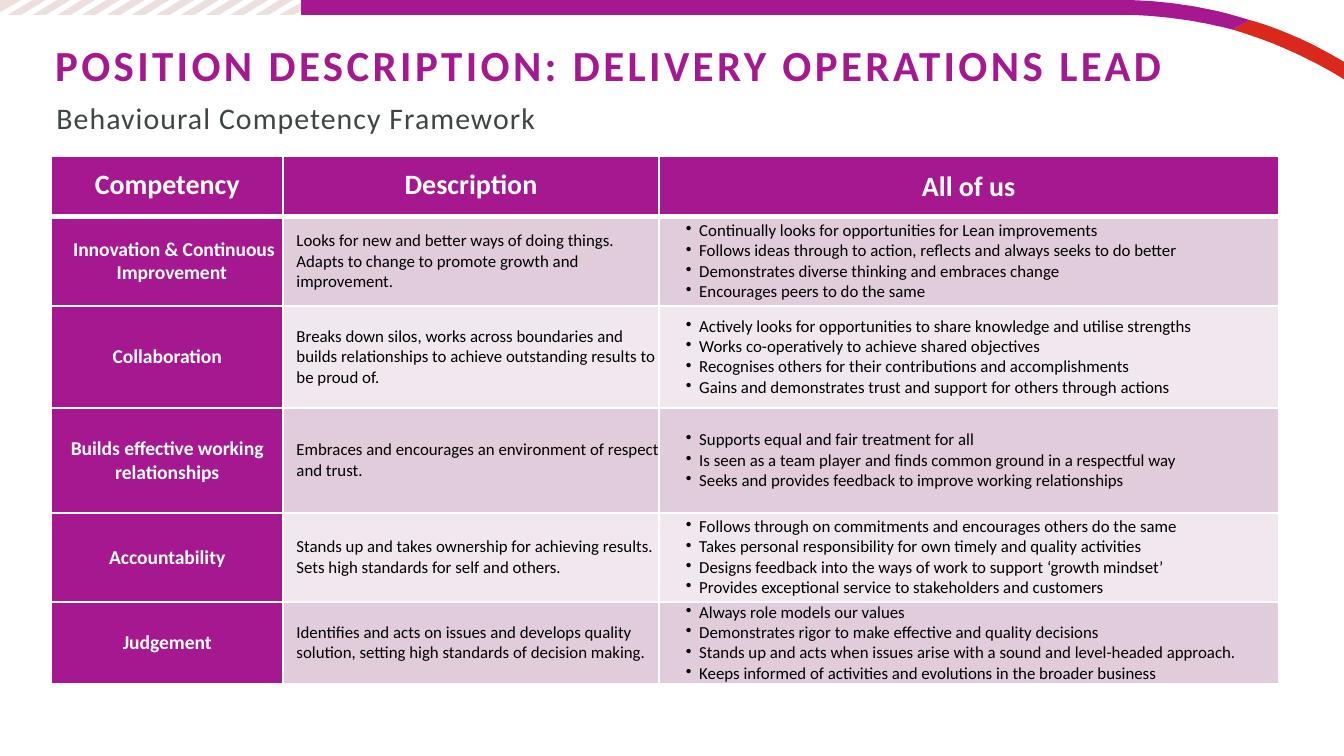
import pptx
import pptx.util
import pptx.dml.color
import pptx.enum.text
import pptx.oxml
import pptx.oxml.ns

HUES = {"plum": "A51890", "red": "DA291C", "blush": "EDDFDE", "slate": "3F4543",
        "white": "FFFFFF", "black": "000000", "dark": "E1CCDB", "light": "F0E8EE"}
RGB = {name: pptx.dml.color.RGBColor.from_string(code) for name, code in HUES.items()}
ALIGN = pptx.enum.text.PP_ALIGN
MID = pptx.enum.text.MSO_ANCHOR.MIDDLE
TOP = pptx.enum.text.MSO_ANCHOR.TOP

deck = pptx.Presentation()
deck.slide_width = pptx.util.Inches(10)
deck.slide_height = deck.slide_width * 9 // 16
UNIT = deck.slide_width / 100
slide = deck.slides.add_slide(deck.slide_layouts[1])


def bend(a, b, c, d, steps=24):
    parts = [i / steps for i in range(steps + 1)]
    return [tuple((1 - t) ** 3 * p + 3 * (1 - t) ** 2 * t * q + 3 * (1 - t) * t * t * r + t ** 3 * s
                  for p, q, r, s in zip(a, b, c, d)) for t in parts]


def write(frame, lines, size, hue, bold=False, align=ALIGN.LEFT, left=0, hang=0, mark=None, space=0):
    frame.word_wrap = True
    for i, line in enumerate(lines):
        para = frame.paragraphs[0] if i == 0 else frame.add_paragraph()
        para.alignment = align
        para.space_before = pptx.util.Pt(0)
        props = para._p.get_or_add_pPr()
        props.set("marL", str(int(left * UNIT)))
        props.set("indent", str(int(-hang * UNIT)))
        ns = pptx.oxml.ns.nsdecls("a")
        bullet = f'<a:buChar {ns} char="{mark}"/>' if mark else f"<a:buNone {ns}/>"
        props.append(pptx.oxml.parse_xml(bullet))
        run = para.add_run()
        run.text = line
        look = {"name": "Calibri", "size": pptx.util.Pt(size), "bold": bold}
        for key, value in look.items():
            setattr(run.font, key, value)
        run.font.color.rgb = RGB[hue]
        if space:
            run._r.get_or_add_rPr().set("spc", str(int(space * 100)))


red = (bend((91.7, 2.2), (94.7, 3.1), (97.4, 4.3), (100, 5.9))
       + bend((100, 4.6), (97.8, 3.3), (95.5, 2.2), (93, 1.5)))
plum = ([(22.4, 0)] + bend((83.2, 0), (86.6, 0), (89.9, 0.5), (93, 1.5))
        + bend((91.7, 2.2), (89, 1.5), (86.1, 1.1), (83.2, 1.1)) + [(22.4, 1.1)])
forms = [("red", red), ("plum", plum)]
for n in range(11):
    x = 0.6 + 1.84 * n
    forms.append(("blush", [(x + 1.8, 0), (x, 1.1), (x + 1, 1.1), (x + 2.8, 0)]))
forms += [("blush", [(22.4, 0.8), (22.4, 0.2), (20.8, 1.1), (21.9, 1.1)]),
          ("blush", [(0.5, 0), (0, 0.3), (0, 0.9), (1.6, 0)]),
          ("blush", [(0, 0), (0, 0.3), (0.5, 0)])]
for hue, points in forms:
    dots = [(x * 100, y * 100) for x, y in points]
    pen = slide.shapes.build_freeform(*dots[0], scale=UNIT / 100)
    pen.add_line_segments(dots[1:], close=True)
    form = pen.convert_to_shape()
    form.shadow.inherit = False
    form.fill.solid()
    form.fill.fore_color.rgb = RGB[hue]
    form.line.fill.background()

heads = [
    (slide.shapes.title, (3.8, 2.6, 88.2, 4.5), 0.3,
     "POSITION DESCRIPTION: DELIVERY OPERATIONS LEAD",
     {"size": 23, "hue": "plum", "bold": True, "space": 1.8}),
    (slide.placeholders[1], (3.8, 7, 82.4, 3), 0.4,
     "Behavioural Competency Framework",
     {"size": 16, "hue": "slate", "space": 0.6}),
]
for shape, box, inset, text, look in heads:
    for key, value in zip(("left", "top", "width", "height"), box):
        setattr(shape, key, int(value * UNIT))
    frame = shape.text_frame
    for side in ("left", "top", "right", "bottom"):
        setattr(frame, "margin_" + side, int(inset * UNIT))
    frame.auto_size = pptx.enum.text.MSO_AUTO_SIZE.NONE
    frame.vertical_anchor = TOP
    write(frame, [text], **look)

rows = [
    (["Competency"], ["Description"], ["All of us"]),
    (["Innovation & Continuous Improvement "],
     ["Looks for new and better ways of doing things. Adapts to change to promote growth and improvement."],
     ["Continually looks for opportunities for Lean improvements",
      "Follows ideas through to action, reflects and always seeks to do better",
      "Demonstrates diverse thinking and embraces change",
      "Encourages peers to do the same"]),
    (["Collaboration"],
     ["Breaks down silos, works across boundaries and builds relationships to achieve "
      "outstanding results to be proud of."],
     ["Actively looks for opportunities to share knowledge and utilise strengths",
      "Works co-operatively to achieve shared objectives",
      "Recognises others for their contributions and accomplishments",
      "Gains and demonstrates trust and support for others through actions"]),
    (["Builds effective working relationships"],
     ["Embraces and encourages an environment of respect and trust."],
     ["Supports equal and fair treatment for all",
      "Is seen as a team player and finds common ground in a respectful way",
      "Seeks and provides feedback to improve working relationships"]),
    (["Accountability"],
     ["Stands up and takes ownership for achieving results. Sets high standards for self and others."],
     ["Follows through on commitments and encourages others do the same",
      "Takes personal responsibility for own timely and quality activities",
      "Designs feedback into the ways of work to support ‘growth mindset’",
      "Provides exceptional service to stakeholders and customers"]),
    (["Judgement"],
     ["Identifies and acts on issues and develops quality solution, setting high standards of decision making."],
     ["Always role models our values",
      "Demonstrates rigor to make effective and quality decisions",
      "Stands up and acts when issues arise with a sound and level-headed approach.",
      "Keeps informed of activities and evolutions in the broader business"]),
]
wides = [17.23, 27.97, 46.1]
talls = [4.5, 6.63, 7.6, 7.8, 6.63, 6.1]
looks = [
    {"size": 10.5, "hue": "white", "bold": True, "align": ALIGN.CENTER},
    {"size": 9, "hue": "black", "left": 1},
    {"size": 9, "hue": "black", "left": 3, "hang": 1, "mark": "•"},
]
box = [int(v * UNIT) for v in (3.83, 11.63, sum(wides), sum(talls))]
table = slide.shapes.add_table(len(rows), len(wides), *box).table
table.first_row = table.horz_banding = False
for col, wide in zip(table.columns, wides):
    col.width = int(wide * UNIT)
for row, tall in zip(table.rows, talls):
    row.height = int(tall * UNIT)

for r, texts in enumerate(rows):
    for c, lines in enumerate(texts):
        cell = table.cell(r, c)
        cell.vertical_anchor = MID
        pads = (0.6, 0, 0.6, 0.3) if r == 0 and c < 2 else (0, 0, 0, 0)
        for side, pad in zip(("left", "top", "right", "bottom"), pads):
            setattr(cell, "margin_" + side, int(pad * UNIT))
        look = dict(looks[0], size=15) if r == 0 else dict(looks[c])
        if (r, c) == (1, 0):
            look["left"] = 1
        write(cell.text_frame, lines, **look)
        cell.fill.solid()
        hue = "plum" if r == 0 or c == 0 else ("dark" if r % 2 else "light")
        cell.fill.fore_color.rgb = RGB[hue]
        for i, edge in enumerate(("lnL", "lnR", "lnT", "lnB")):
            thick = 3 if (r, edge) in ((0, "lnB"), (1, "lnT")) else 1
            line = pptx.oxml.parse_xml(
                f'<a:{edge} {pptx.oxml.ns.nsdecls("a")} w="{thick * 12700}"><a:solidFill>'
                f'<a:srgbClr val="{HUES["white"]}"/></a:solidFill></a:{edge}>')
            cell._tc.get_or_add_tcPr().insert(i, line)

deck.save("out.pptx")
